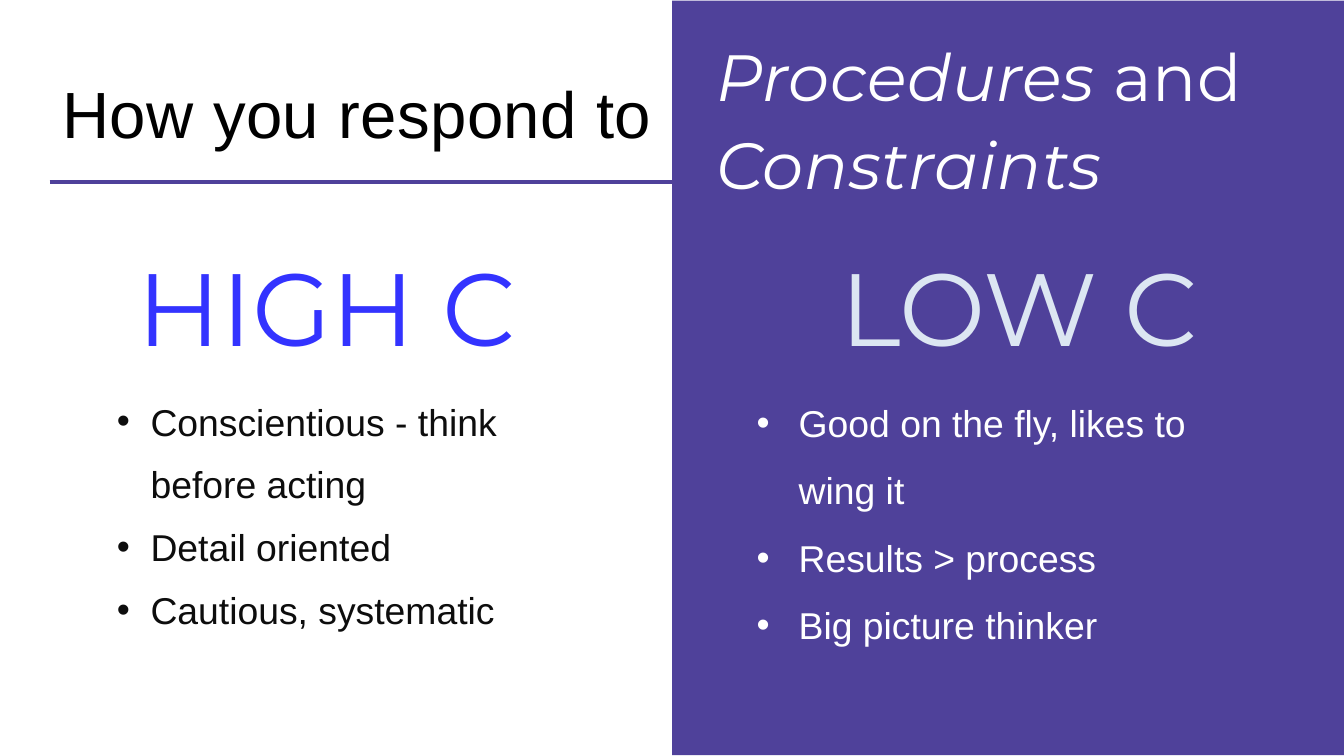
from lxml.etree import SubElement
from pptx import Presentation
from pptx.dml.color import RGBColor
from pptx.enum.shapes import MSO_CONNECTOR, MSO_SHAPE
from pptx.enum.text import MSO_AUTO_SIZE, PP_ALIGN
from pptx.oxml.ns import qn
from pptx.util import Pt

EMU_PER_PX = 9525
PURPLE = RGBColor(0x4F, 0x41, 0x9A)
BLUE = RGBColor(0x33, 0x33, 0xFF)
PALE_BLUE = RGBColor(0xDC, 0xE6, 0xF2)
NEAR_BLACK = RGBColor(0x0D, 0x0D, 0x0D)
BLACK = RGBColor(0, 0, 0)
WHITE = RGBColor(0xFF, 0xFF, 0xFF)


def px(value):
    return value * EMU_PER_PX


def add_bullet(para, indent):
    properties = para._p.get_or_add_pPr()
    properties.set("marL", str(px(indent)))
    properties.set("indent", str(-px(indent)))
    SubElement(properties, qn("a:buFont"), typeface="Arial")
    SubElement(properties, qn("a:buChar"), char="•")


def add_text(page, place, paragraphs, *, font, size, color, line_spacing,
             align=PP_ALIGN.LEFT, tracking=0, bullet_indent=0):
    """Each paragraph is a list of (text, italic) spans; tracking is in 1/100 pt."""
    box = page.shapes.add_textbox(*map(px, place))
    frame = box.text_frame
    frame.word_wrap = True
    frame.auto_size = MSO_AUTO_SIZE.SHAPE_TO_FIT_TEXT
    frame.margin_left = frame.margin_top = 0
    frame.margin_right = frame.margin_bottom = 0
    for index, spans in enumerate(paragraphs):
        para = frame.add_paragraph() if index else frame.paragraphs[0]
        para.alignment = align
        para.line_spacing = line_spacing
        if bullet_indent:
            add_bullet(para, bullet_indent)
        for text, italic in spans:
            span = para.add_run()
            span.text = text
            span.font.name = font
            span.font.size = Pt(size)
            span.font.italic = italic
            span.font.color.rgb = color
            if tracking:
                span.font._element.set("spc", str(tracking))


def add_panel(page, place, color):
    panel = page.shapes.add_shape(MSO_SHAPE.RECTANGLE, *map(px, place))
    panel.shadow.inherit = False
    panel.fill.solid()
    panel.fill.fore_color.rgb = color
    panel.line.fill.background()


def add_rule(page, left, right, y, color):
    rule = page.shapes.add_connector(
        MSO_CONNECTOR.STRAIGHT, px(left), px(y), px(right), px(y))
    rule.line.color.rgb = color
    rule.line.width = Pt(3.75)
    SubElement(rule._element.spPr, qn("a:effectLst"))


def add_level(page, left, text, color):
    add_text(page, (left, 366, 632, 160), [[(text, False)]],
             font="Montserrat", size=110, color=color,
             line_spacing=Pt(118.8), align=PP_ALIGN.CENTER)


def add_traits(page, place, traits, color, line_spacing, indent):
    add_text(page, place, [[(trait, False)] for trait in traits],
             font="Arial", size=40, color=color,
             line_spacing=line_spacing, bullet_indent=indent)


def main():
    deck = Presentation()
    deck.slide_width, deck.slide_height = px(1920), px(1080)
    page = deck.slides.add_slide(deck.slide_layouts[6])

    add_text(page, (89, 111, 879, 107), [[("How you respond to", False)]],
             font="Arial", size=70, color=BLACK,
             line_spacing=Pt(79.4), tracking=60)
    add_panel(page, (960, 1, 963, 1078), PURPLE)
    add_text(page, (1024, 38, 855, 249),
             [[("Procedures", True), (" and ", False), ("Constraints", True)]],
             font="Montserrat", size=70, color=WHITE,
             line_spacing=Pt(94.5), tracking=70)

    add_level(page, 151, "HIGH C", BLUE)
    add_level(page, 1141, "LOW C", PALE_BLUE)

    add_traits(page, (167, 544, 599, 351),
               ["Conscientious - think before acting", "Detail oriented",
                "Cautious, systematic"],
               NEAR_BLACK, line_spacing=1.4, indent=48)
    add_traits(page, (1081, 540, 720, 375),
               ["Good on the fly, likes to wing it", "Results > process",
                "Big picture thinker"],
               WHITE, line_spacing=1.5, indent=60)

    add_rule(page, 71, 960, 260, PURPLE)
    deck.save("out.pptx")


if __name__ == "__main__":
    main()
